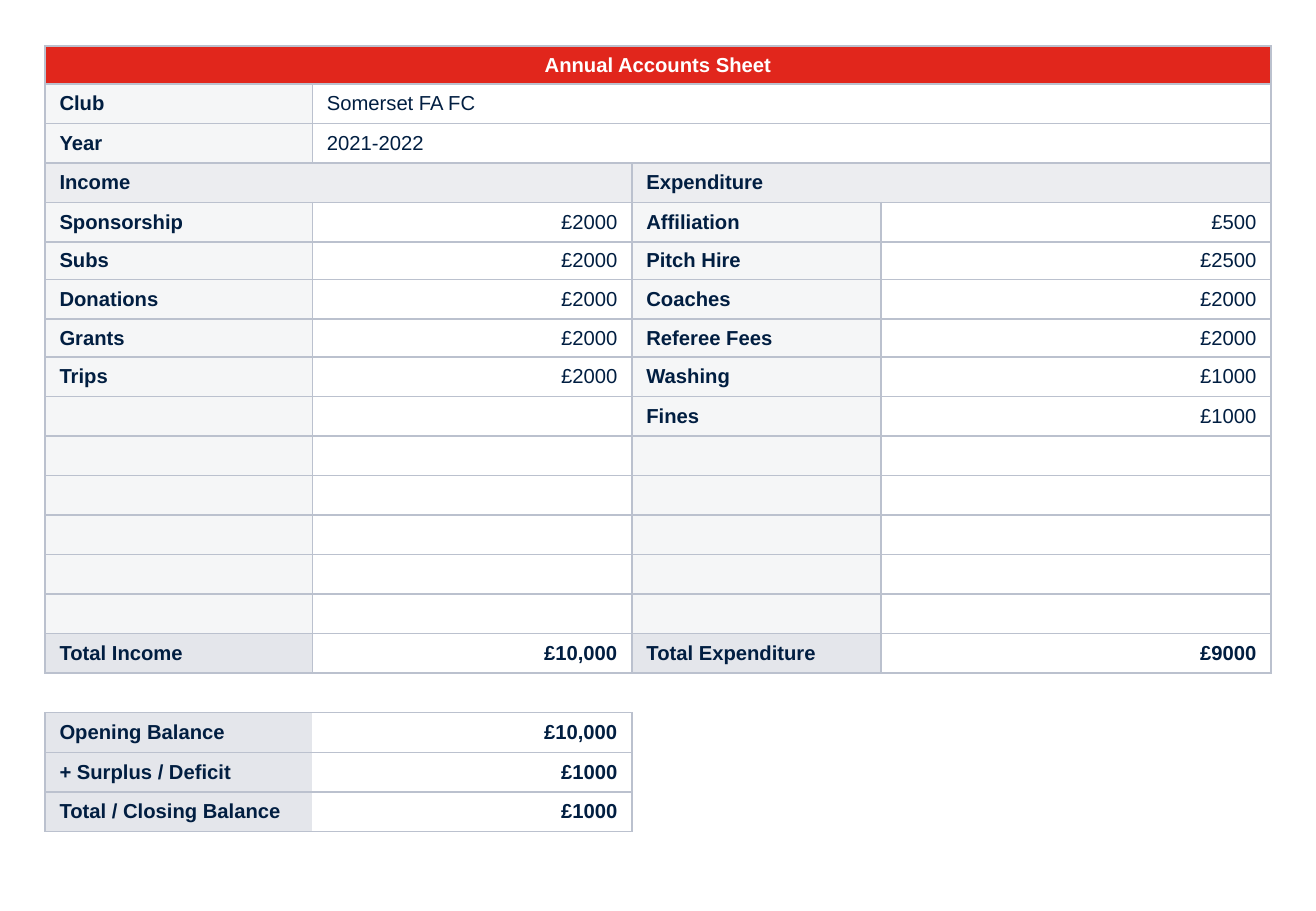
from lxml import etree
from pptx import Presentation
from pptx.dml.color import RGBColor
from pptx.enum.text import MSO_ANCHOR, PP_ALIGN
from pptx.oxml.ns import qn
from pptx.util import Inches, Pt

LEFT, CENTER, RIGHT = PP_ALIGN.LEFT, PP_ALIGN.CENTER, PP_ALIGN.RIGHT
MIDDLE = MSO_ANCHOR.MIDDLE
COLORS = {
    "red": "E1261C",
    "navy": "011E41",
    "white": "FFFFFF",
    "border": "BBC1CE",
    "label": "F1F3F5",
    "heading": "E4E6EB",
}
FONT, FONT_SIZE = "Arial", 12
NO_STYLE = "{2D5ABB26-0587-4C30-8999-92F81FD0307C}"

COLUMN_WIDTHS = [2.2, 2.63, 2.05, 3.21]
TABLE_HEIGHT = 6.47
COMPACT_HEIGHT = 0.31
COMPACT_ROWS = (0, 5, 7)

TITLE = "Annual Accounts Sheet"
DETAILS = [("Club", "Somerset FA FC"), ("Year", "2021-2022")]
HEADINGS = ("Income", "Expenditure")
ENTRIES = [
    ("Sponsorship", "£2000", "Affiliation", "£500"),
    ("Subs", "£2000", "Pitch Hire", "£2500"),
    ("Donations", "£2000", "Coaches", "£2000"),
    ("Grants", "£2000", "Referee Fees", "£2000"),
    ("Trips", "£2000", "Washing", "£1000"),
    ("", "", "Fines", "£1000"),
] + [("",) * 4] * 5
TOTALS = ("Total Income", "£10,000", "Total Expenditure", "£9000")
BALANCES = [
    ("Opening Balance", "£10,000"),
    ("+ Surplus / Deficit", "£1000"),
    ("Total / Closing Balance", "£1000"),
]
FIRST_ENTRY = 1 + len(DETAILS) + 1
TOTAL_ROW = FIRST_ENTRY + len(ENTRIES)
FIRST_BALANCE = TOTAL_ROW + 2
ROW_COUNT = FIRST_BALANCE + len(BALANCES)


def set_borders(cell, sides):
    """Draw the named sides and switch the other ones off."""
    properties = cell._tc.get_or_add_tcPr()
    for side in "LRTB":
        line = etree.SubElement(properties, qn(f"a:ln{side}"), w=str(Pt(1)))
        if side in sides:
            fill = etree.SubElement(line, qn("a:solidFill"))
            etree.SubElement(fill, qn("a:srgbClr"), val=COLORS["border"])
        else:
            etree.SubElement(line, qn("a:noFill"))


def set_fill(cell, color, opacity):
    cell.fill.solid()
    cell.fill.fore_color.rgb = RGBColor.from_string(COLORS[color])
    if opacity < 100:
        color_element = cell._tc.tcPr.find(qn("a:solidFill"))[0]
        etree.SubElement(color_element, qn("a:alpha"), val=str(opacity * 1000))


def style_cell(cell, text="", fill="white", opacity=100, sides="LRTB",
               color="navy", bold=True, align=LEFT):
    set_borders(cell, sides)
    set_fill(cell, fill, opacity)
    cell.vertical_anchor = MIDDLE
    cell.margin_left = cell.margin_right = Inches(0.12)
    cell.margin_top = cell.margin_bottom = Inches(0.06)
    cell.text = text
    paragraph = cell.text_frame.paragraphs[0]
    if not text:
        # An empty cell takes its line height from the end mark.
        paragraph._p.get_or_add_endParaRPr().set("sz", str(FONT_SIZE * 100))
    paragraph.alignment = align
    paragraph.font.name = FONT
    paragraph.font.size = Pt(FONT_SIZE)
    paragraph.font.bold = bold
    paragraph.font.color.rgb = RGBColor.from_string(COLORS[color])


def merge_row(table, row, first, last):
    """Merge cells of one row and return the visible cell."""
    for column in range(first + 1, last + 1):
        style_cell(table.cell(row, column), sides="RTB" if column == last else "TB")
    table.cell(row, first).merge(table.cell(row, last))
    return table.cell(row, first)


def add_accounts_table(slide):
    compact_count = len(COMPACT_ROWS)
    row_height = (TABLE_HEIGHT - COMPACT_HEIGHT * compact_count) / (ROW_COUNT - compact_count)
    frame = slide.shapes.add_table(
        ROW_COUNT, len(COLUMN_WIDTHS), Inches(0.37), Inches(0.38),
        Inches(sum(COLUMN_WIDTHS)), Inches(TABLE_HEIGHT))
    table = frame.table
    table.first_row = table.horz_banding = False
    table._tbl.tblPr.find(qn("a:tableStyleId")).text = NO_STYLE
    for column, width in zip(table.columns, COLUMN_WIDTHS):
        column.width = Inches(width)
    for index, row in enumerate(table.rows):
        row.height = Inches(COMPACT_HEIGHT if index in COMPACT_ROWS else row_height)
    return table


def fill_header(table):
    style_cell(merge_row(table, 0, 0, 3), TITLE, "red", color="white", align=CENTER)
    for row, (label, value) in enumerate(DETAILS, 1):
        style_cell(table.cell(row, 0), label, "label", 70)
        style_cell(merge_row(table, row, 1, 3), value, bold=False)
    for column, heading in zip((0, 2), HEADINGS):
        cell = merge_row(table, FIRST_ENTRY - 1, column, column + 1)
        style_cell(cell, heading, "heading", 70)


def fill_accounts(table):
    for row, texts in enumerate(ENTRIES + [TOTALS], FIRST_ENTRY):
        is_total = row == TOTAL_ROW
        for column, text in enumerate(texts):
            cell = table.cell(row, column)
            if column % 2:
                style_cell(cell, text, bold=is_total, align=RIGHT)
            elif is_total:
                style_cell(cell, text, "heading")
            else:
                style_cell(cell, text, "label", 70)


def fill_balances(table):
    for column, sides in enumerate(("TB", "TB", "T", "T")):
        style_cell(table.cell(TOTAL_ROW + 1, column), sides=sides)
    for row, (label, amount) in enumerate(BALANCES, FIRST_BALANCE):
        style_cell(table.cell(row, 0), label, "heading", sides="LTB")
        style_cell(table.cell(row, 1), amount, sides="RTB", align=RIGHT)
        style_cell(table.cell(row, 2), sides="L")
        style_cell(table.cell(row, 3), sides="")


def main():
    presentation = Presentation()
    presentation.slide_width = Inches(10.83)
    presentation.slide_height = Inches(7.5)
    slide = presentation.slides.add_slide(presentation.slide_layouts[6])
    table = add_accounts_table(slide)
    fill_header(table)
    fill_accounts(table)
    fill_balances(table)
    presentation.save("out.pptx")


if __name__ == "__main__":
    main()
